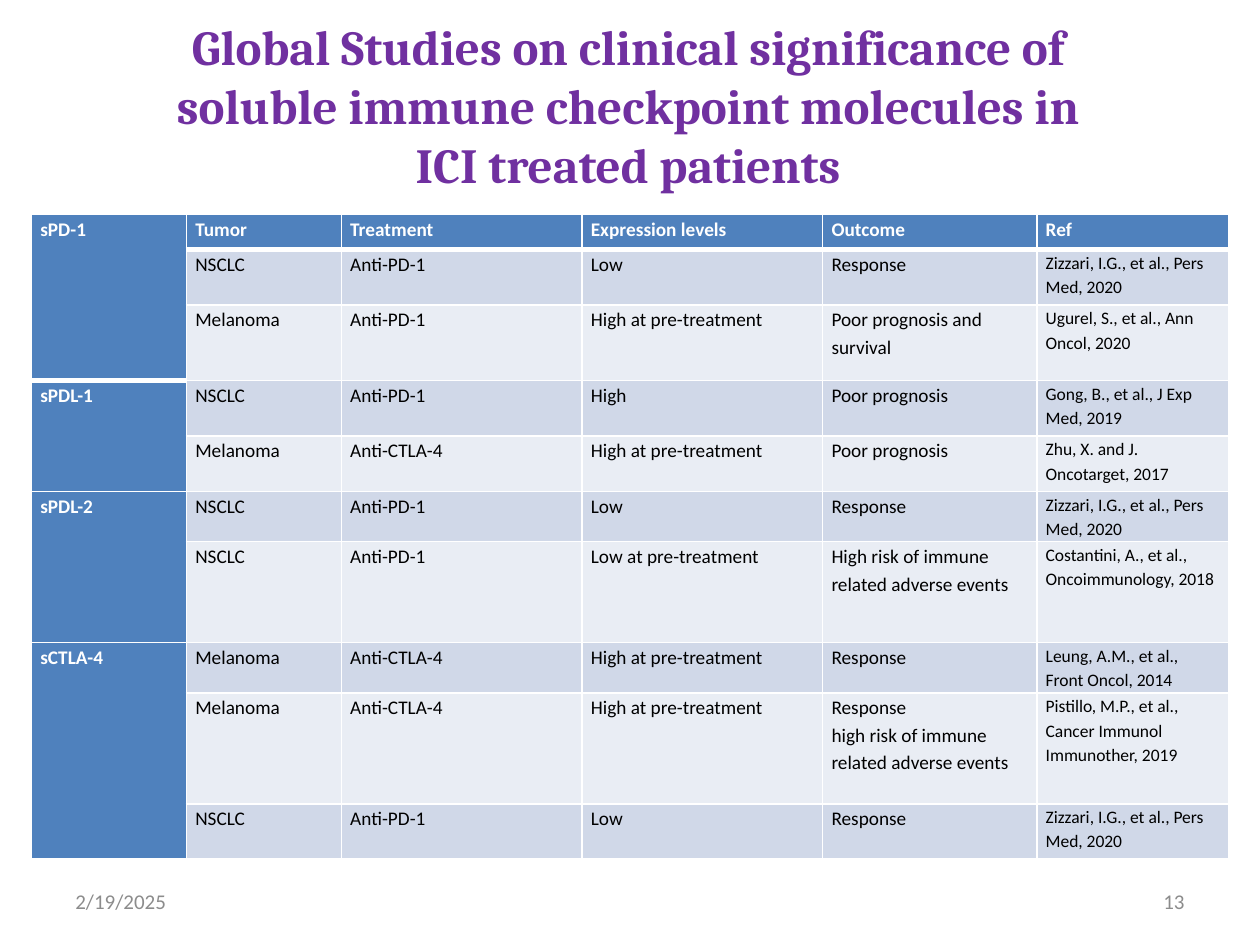
from lxml import etree
from pptx import Presentation
from pptx.dml.color import RGBColor
from pptx.enum.text import MSO_ANCHOR, PP_ALIGN
from pptx.oxml.ns import qn
from pptx.util import Inches, Pt

LEFT, CENTER, RIGHT = PP_ALIGN.LEFT, PP_ALIGN.CENTER, PP_ALIGN.RIGHT
MIDDLE = MSO_ANCHOR.MIDDLE

COLORS = {
    "title": "7030A0",
    "footer": "8C8C8C",
    "header": "4F81BD",
    "band_dark": "D0D8E8",
    "band_light": "E9EDF4",
    "white": "FFFFFF",
    "text": "000000",
}

HEADER = ["Tumor", "Treatment", "Expression levels", "Outcome", "Ref"]
ZIZZARI = "Zizzari, I.G., et al., Pers Med, 2020"
STUDIES = [
    ["NSCLC", "Anti-PD-1", "Low", "Response", ZIZZARI],
    ["Melanoma", "Anti-PD-1", "High at pre-treatment",
     "Poor prognosis and survival", "Ugurel, S., et al., Ann Oncol, 2020"],
    ["NSCLC", "Anti-PD-1", "High", "Poor prognosis",
     "Gong, B., et al., J Exp Med, 2019"],
    ["Melanoma", "Anti-CTLA-4", "High at pre-treatment", "Poor prognosis",
     "Zhu, X. and J. Oncotarget, 2017"],
    ["NSCLC", "Anti-PD-1", "Low", "Response", ZIZZARI],
    ["NSCLC", "Anti-PD-1", "Low at pre-treatment",
     "High risk of immune related adverse events",
     "Costantini, A., et al., Oncoimmunology, 2018"],
    ["Melanoma", "Anti-CTLA-4", "High at pre-treatment", "Response",
     "Leung, A.M., et al., Front Oncol, 2014"],
    ["Melanoma", "Anti-CTLA-4", "High at pre-treatment",
     "Response\nhigh risk of immune related adverse events",
     "Pistillo, M.P., et al.,\nCancer Immunol Immunother, 2019"],
    ["NSCLC", "Anti-PD-1", "Low", "Response", ZIZZARI],
]
MOLECULES = [("sPD-1", 3), ("sPDL-1", 2), ("sPDL-2", 2), ("sCTLA-4", 3)]
COL_WIDTHS = [1.23, 1.23, 1.91, 1.91, 1.7, 1.52]
ROW_HEIGHTS = [0.28, 0.44, 0.6, 0.44, 0.44, 0.4, 0.8, 0.4, 0.88, 0.44]


class SlideBuilder:
    def __init__(self, slide):
        self.s = slide
        self.body_font = "Calibri"
        self.title_font = "Cambria"

    def style(self, p, size, color, bold=False, font=None):
        p.font.name = font or self.body_font
        p.font.size = Pt(size)
        p.font.bold = bold
        p.font.color.rgb = RGBColor.from_string(COLORS[color])

    def text(self, text, x, y, w, h, size, color, align=LEFT, **font):
        box = self.s.shapes.add_textbox(Inches(x), Inches(y), Inches(w), Inches(h))
        tf = box.text_frame
        tf.word_wrap = True
        tf.vertical_anchor = MIDDLE
        p = tf.paragraphs[0]
        p.text = text
        p.alignment = align
        self.style(p, size, color, **font)

    def table(self, x, y, col_widths, row_heights):
        frame = self.s.shapes.add_table(
            len(row_heights), len(col_widths), Inches(x), Inches(y),
            Inches(sum(col_widths)), Inches(sum(row_heights)))
        table = frame.table
        table.first_row = table.horz_banding = False
        for col, width in zip(table.columns, col_widths):
            col.width = Inches(width)
        for row, height in zip(table.rows, row_heights):
            row.height = Inches(height)
        return table

    def borders(self, cell, top, bottom):
        """Draw white cell edges; top and bottom are widths in points."""
        tc_pr = cell._tc.get_or_add_tcPr()
        for side, width in (("L", 1), ("R", 1), ("T", top), ("B", bottom)):
            ln = etree.SubElement(tc_pr, qn(f"a:ln{side}"), w=str(Pt(width)))
            fill = etree.SubElement(ln, qn("a:solidFill"))
            etree.SubElement(fill, qn("a:srgbClr"), val=COLORS["white"])

    def cell(self, cell, text, fill, size, color, bold):
        cell.margin_left = cell.margin_right = Inches(0.07)
        cell.margin_top = cell.margin_bottom = 0
        cell.fill.solid()
        cell.fill.fore_color.rgb = RGBColor.from_string(COLORS[fill])
        cell.text = text
        for p in cell.text_frame.paragraphs:
            p.line_spacing = 1.15
            self.style(p, size, color, bold)


def edge_above(row, col):
    """Width of the line above a cell: heavy below the header and below sPD-1."""
    return 3 if row == (MOLECULES[0][1] if col == 0 else 1) else 1


def add_studies(b):
    table = b.table(0.25, 1.7, COL_WIDTHS, ROW_HEIGHTS)
    labels = {}
    start = 0
    for name, span in MOLECULES:
        table.cell(start, 0).merge(table.cell(start + span - 1, 0))
        labels[start] = name
        start += span

    for r, values in enumerate([HEADER] + STUDIES):
        for c, text in enumerate([labels.get(r, "")] + values):
            cell = table.cell(r, c)
            span = cell.span_height if cell.is_merge_origin else 1
            b.borders(cell, edge_above(r, c), edge_above(r + span, c))
            if r == 0 or c == 0:
                b.cell(cell, text, "header", 11, "white", True)
            else:
                band = "band_dark" if r % 2 else "band_light"
                size = 10 if c == len(HEADER) else 11
                b.cell(cell, text, band, size, "text", False)


def main():
    prs = Presentation()
    prs.slide_width, prs.slide_height = Inches(10), Inches(7.5)
    b = SlideBuilder(prs.slides.add_slide(prs.slide_layouts[6]))
    b.text("2/19/2025", 0.5, 6.95, 2.33, 0.4, 12, "footer")
    b.text("13", 7.17, 6.95, 2.33, 0.4, 12, "footer", RIGHT)
    b.text("Global Studies on clinical significance of\v"
           "soluble immune checkpoint molecules in\v"
           "ICI treated patients",
           0.47, 0.21, 9.03, 1.25, 28, "title", CENTER,
           bold=True, font=b.title_font)
    add_studies(b)
    prs.save("out.pptx")


if __name__ == "__main__":
    main()
